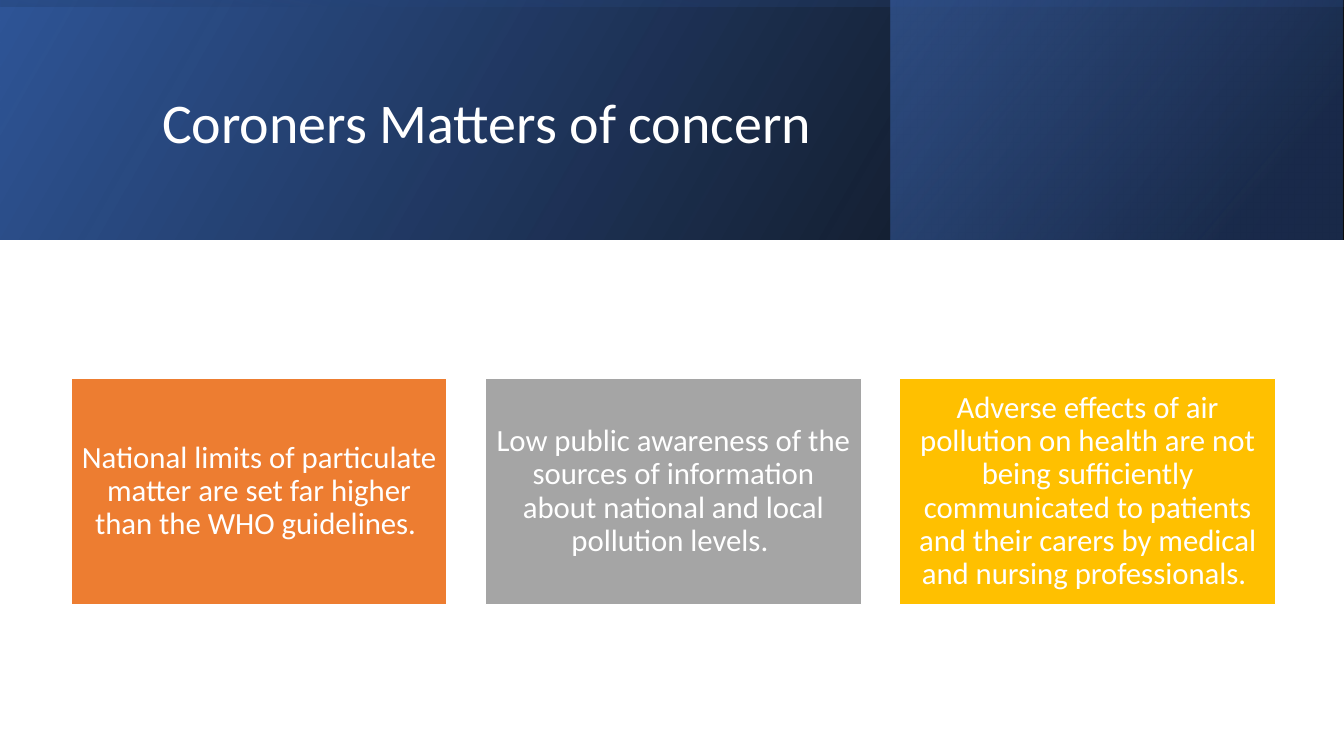
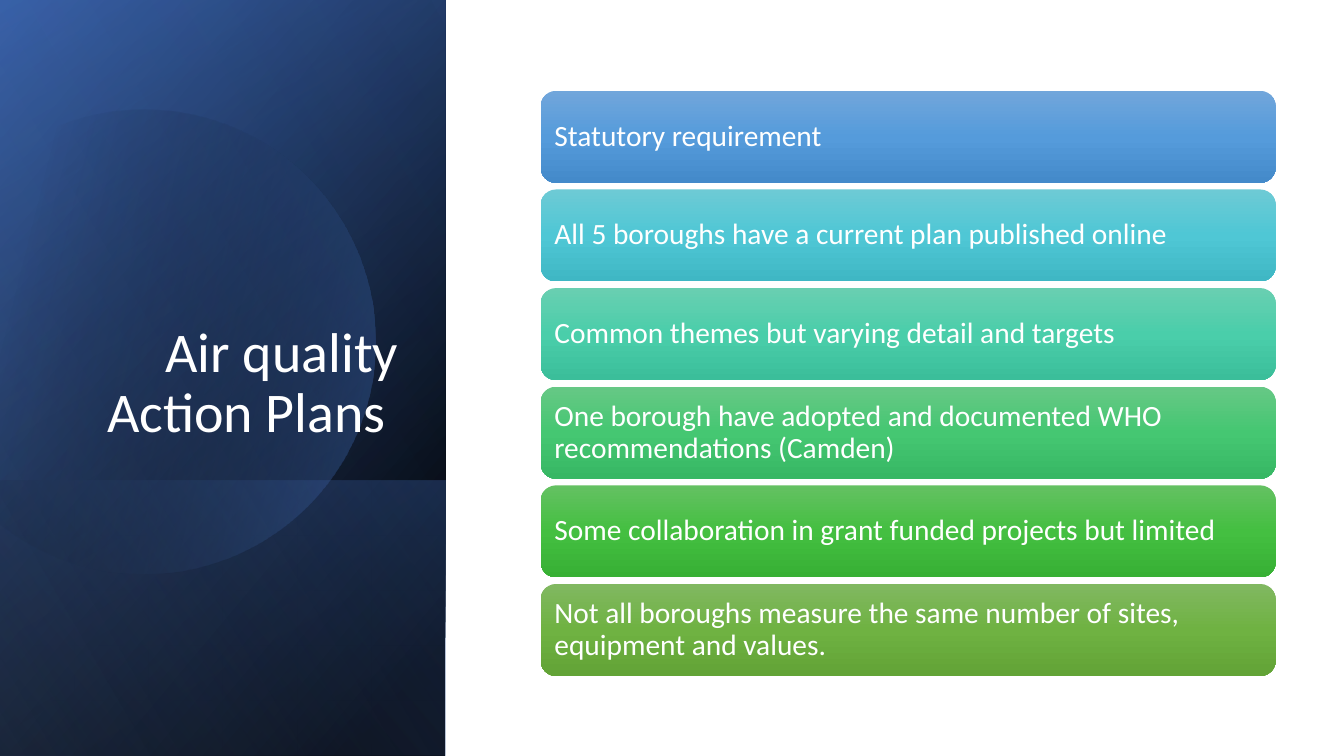
from math import acos, cos, sin

from lxml import etree
from pptx import Presentation
from pptx.dml.color import RGBColor
from pptx.enum.shapes import MSO_SHAPE
from pptx.enum.text import MSO_ANCHOR, PP_ALIGN
from pptx.oxml.ns import qn
from pptx.util import Pt

RECT = MSO_SHAPE.RECTANGLE
ROUNDED = MSO_SHAPE.ROUNDED_RECTANGLE
MIDDLE, BOTTOM = MSO_ANCHOR.MIDDLE, MSO_ANCHOR.BOTTOM
LEFT, CENTER, RIGHT = PP_ALIGN.LEFT, PP_ALIGN.CENTER, PP_ALIGN.RIGHT

FONT = "Calibri"
SLIDE_W, SLIDE_H = 960, 540
HEADER_H = 170.8
PANEL_W = 318.2
COLORS = {
    "white": "FFFFFF",
    "black": "000000",
    "navy": "203864",
    "deep": "2F5597",
    "blue": "4472C4",
    "pale": "8FAADC",
    "orange": "ED7D31",
    "gray": "A5A5A5",
    "gold": "FFC000",
}

CONCERNS = [
    ("orange", "National limits of particulate matter are set far higher than the WHO guidelines. "),
    ("gray", "Low public awareness of the sources of information about national and local "
             "pollution levels. "),
    ("gold", "Adverse effects of air pollution on health are not being sufficiently communicated "
             "to patients and their carers by medical and nursing professionals. "),
]
ACTION_PLANS = [
    (("71A6DB", "559BDB", "448ACA"), "Statutory requirement"),
    (("6DCAD5", "4FC7D5", "3FB7C4"), "All 5 boroughs have a current plan published online"),
    (("69CFB1", "4ACEAA", "3BBE9A"), "Common themes but varying detail and targets"),
    (("66C885", "45C772", "37B764"),
     "One borough have adopted and documented WHO recommendations (Camden)"),
    (("64C162", "44BF41", "37B034"), "Some collaboration in grant funded projects but limited"),
    (("81B861", "6FB242", "62A336"),
     "Not all boroughs measure the same number of sites, equipment and values."),
]


def rgb(name):
    return RGBColor.from_string(COLORS[name])


def fill_gradient(shape, stops, angle):
    shape.fill.solid()
    solid = shape._element.spPr.find(qn("a:solidFill"))
    gradient = etree.Element(qn("a:gradFill"), rotWithShape="1")
    stop_list = etree.SubElement(gradient, qn("a:gsLst"))
    for position, color, opacity in stops:
        stop = etree.SubElement(stop_list, qn("a:gs"), pos=str(position * 1000))
        value = etree.SubElement(stop, qn("a:srgbClr"), val=COLORS.get(color, color))
        if opacity < 100:
            etree.SubElement(value, qn("a:alpha"), val=str(opacity * 1000))
    etree.SubElement(gradient, qn("a:lin"), ang=str(angle * 60000), scaled="0")
    solid.getparent().replace(solid, gradient)


def add_plain(slide, kind, left, top, width, height):
    shape = slide.shapes.add_shape(kind, Pt(left), Pt(top), Pt(width), Pt(height))
    shape.shadow.inherit = False
    shape.line.fill.background()
    return shape


def add_band(slide, left, top, width, height, stops, angle, rotation=0):
    if rotation in (90, 270):
        left += (width - height) / 2
        top += (height - width) / 2
        width, height = height, width
    band = add_plain(slide, RECT, left, top, width, height)
    band.rotation = rotation
    band._element.spPr.find(qn("a:xfrm")).set("flipH", "1")
    fill_gradient(band, stops, angle)


def add_disc(slide, center_x, center_y, radius, stops, angle):
    sweep = acos(-center_x / radius)
    steps = 120
    angles = [sweep * (2 * i / steps - 1) for i in range(steps + 1)]
    points = [(Pt(center_x + radius * cos(a)), Pt(center_y + radius * sin(a))) for a in angles]
    builder = slide.shapes.build_freeform(*points[0])
    builder.add_line_segments(points[1:], close=True)
    disc = builder.convert_to_shape()
    disc.shadow.inherit = False
    disc.line.fill.background()
    fill_gradient(disc, stops, angle)


def write(shape, text, size, align, anchor=MIDDLE):
    frame = shape.text_frame
    frame.word_wrap = True
    frame.vertical_anchor = anchor
    paragraph = frame.paragraphs[0]
    paragraph.text = text
    paragraph.alignment = align
    paragraph.line_spacing = 0.9
    paragraph.font.name = FONT
    paragraph.font.size = Pt(size)
    paragraph.font.color.rgb = rgb("white")


def set_insets(shape, inset):
    frame = shape.text_frame
    frame.margin_left = frame.margin_right = Pt(inset)
    frame.margin_top = frame.margin_bottom = Pt(inset)


def add_title(slide, text, left, top, width, height, align, anchor):
    title = slide.shapes.add_textbox(Pt(left), Pt(top), Pt(width), Pt(height))
    write(title, text, 40, align, anchor)


def add_concern(slide, index, color, text):
    card = add_plain(slide, RECT, 50.8 + index * 295.9, 270.5, 268.6, 161.3)
    card.fill.solid()
    card.fill.fore_color.rgb = rgb(color)
    card.line.color.rgb = rgb("white")
    card.line.width = Pt(1)
    set_insets(card, 6.6)
    write(card, text, 22, CENTER)


def add_action_plan(slide, index, shades, text):
    bar = add_plain(slide, ROUNDED, 386.2, 64.9 + index * 70.45, 525, 65.7)
    fill_gradient(bar, [(i * 50, shade, 100) for i, shade in enumerate(shades)], 90)
    set_insets(bar, 6.6)
    write(bar, text, 21, LEFT)


def build_concerns(slide):
    add_band(slide, 0, 0, SLIDE_W, HEADER_H,
             [(0, "black", 96), (100, "deep", 100)], 330)
    add_band(slide, 636.2, 0, 322.8, HEADER_H,
             [(19, "navy", 68), (100, "blue", 48)], 320)
    add_band(slide, 0, 0, SLIDE_W, HEADER_H,
             [(23, "deep", 16), (99, "black", 45)], 350, 270)
    add_title(slide, "Coroners Matters of concern", 108.7, 27.4, 765.4, 123.8, LEFT, MIDDLE)
    for index, (color, text) in enumerate(CONCERNS):
        add_concern(slide, index, color, text)


def build_action_plans(slide):
    panel = (0, 0, PANEL_W, SLIDE_H)
    add_band(slide, *panel, [(8, "black", 100), (100, "deep", 100)], 50, 90)
    add_band(slide, *panel, [(0, "black", 0), (99, "blue", 46)], 30, 90)
    add_band(slide, 0, 342.9, PANEL_W, 197.1,
             [(2, "blue", 29), (100, "black", 30)], 130, 90)
    add_disc(slide, 102.5, 243.8, 165.8, [(12, "black", 0), (100, "blue", 43)], 14)
    add_band(slide, *panel, [(0, "black", 0), (99, "pale", 11)], 120, 90)
    add_title(slide, "Air quality Action Plans ", 46, 132.8, 245.5, 188.6, RIGHT, BOTTOM)
    for index, (shades, text) in enumerate(ACTION_PLANS):
        add_action_plan(slide, index, shades, text)


def main():
    deck = Presentation()
    deck.slide_width, deck.slide_height = Pt(SLIDE_W), Pt(SLIDE_H)
    blank = deck.slide_layouts[6]
    for build in (build_concerns, build_action_plans):
        build(deck.slides.add_slide(blank))
    deck.save("out.pptx")


if __name__ == "__main__":
    main()
